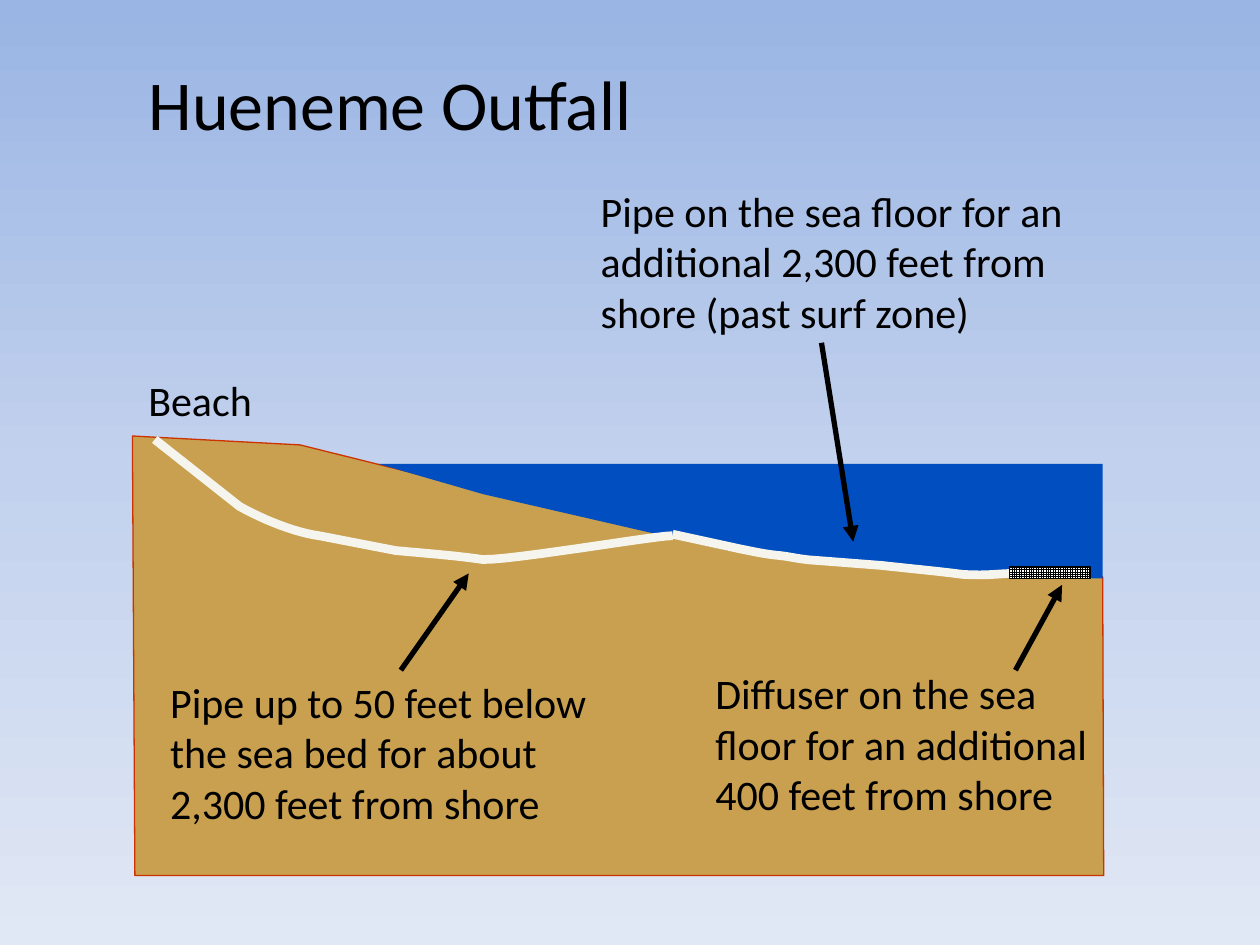
from copy import deepcopy

from lxml.etree import SubElement
from pptx import Presentation
from pptx.dml.color import RGBColor
from pptx.enum.dml import MSO_PATTERN
from pptx.enum.shapes import MSO_CONNECTOR, MSO_SHAPE
from pptx.enum.text import MSO_ANCHOR, MSO_AUTO_SIZE, PP_ALIGN
from pptx.oxml.ns import qn
from pptx.util import Cm, Pt

BLACK, SAND, SEA, PIPE, RUST = "000000", "C9A04F", "004EC0", "F5F4ED", "CC3300"
SKY = ["9AB5E4", "C2D1ED", "E1E8F5"]

GROUND = [(2.67, 8.79), (6.05, 8.97), (9.63, 9.86), (14.71, 11.07), (19.28, 11.61),
          (22.23, 11.63), (22.25, 17.65), (2.72, 17.65)]
WATER = [(7.62, 9.35), (22.23, 9.35), (22.23, 11.66), (19.38, 11.63),
         (14.68, 11.1), (9.73, 9.96)]
SEA_FLOOR_PIPE = [(13.56, 10.77), (14.94, 11.07),
                  (15.24, 11.13, 15.47, 11.18, 15.72, 11.2),
                  (15.98, 11.23, 16.13, 11.28, 16.48, 11.3), (17.78, 11.4),
                  (18.31, 11.46, 18.87, 11.51, 19.41, 11.58),
                  (19.96, 11.61, 20.12, 11.56, 20.47, 11.56)]
BURIED_PIPE = [(3.12, 8.86), (4.83, 10.21), (5.33, 10.49, 5.97, 10.74, 6.43, 10.8),
               (7.98, 11.1), (8.51, 11.15, 9.19, 11.2, 9.73, 11.28),
               (10.29, 11.3, 13.21, 10.8, 13.56, 10.8)]

ARROWS = [(8.08, 13.51, 9.45, 11.56), (16.56, 6.91, 17.2, 10.92),
          (20.47, 13.51, 21.41, 11.79)]
LABELS = [
    ("Pipe on the sea floor for an additional 2,300 feet from shore (past surf zone)",
     (11.86, 3.61, 10.36, 3.33)),
    ("Pipe up to 50 feet below the sea bed for about 2,300 feet from shore",
     (3.18, 13.51, 9.32, 3.33)),
    ("Diffuser on the sea floor for an additional 400 feet from shore",
     (14.17, 13.34, 8.46, 3.33)),
    ("Beach", (2.74, 7.42, 2.72, 1.27)),
]


def color(value):
    """Turn a hex string into a colour."""
    return RGBColor.from_string(value)


def set_line(shape, value, width):
    """Give a shape or connector a solid line."""
    shape.line.color.rgb = color(value)
    shape.line.width = Pt(width)


def set_text(frame, text, size):
    """Write one left-aligned paragraph in black Calibri."""
    frame.word_wrap = True
    para = frame.paragraphs[0]
    para.text = text
    para.alignment = PP_ALIGN.LEFT
    para.font.name = "Calibri"
    para.font.size = Pt(size)
    para.font.color.rgb = color(BLACK)


def paint_sky(page):
    """Fill the background with an even gradient from top to bottom."""
    fill = page.background.fill
    fill.gradient()
    fill.gradient_angle = 270
    stops = page._element.find(f".//{qn('a:gsLst')}")
    stops.insert(1, deepcopy(stops[0]))
    for index, (stop, value) in enumerate(zip(fill.gradient_stops, SKY)):
        stop.color.rgb = color(value)
        stop.position = index / (len(SKY) - 1)


def add_title(page, text):
    """Place and format the title placeholder."""
    title = page.shapes.title
    title.left, title.top, title.width, title.height = map(Cm, (2.74, 0.76, 22.66, 2.62))
    title.text_frame.vertical_anchor = MSO_ANCHOR.MIDDLE
    set_text(title.text_frame, text, 40)


def flatten(outline, steps=12):
    """Turn an outline of points and Bézier curves into plain points."""
    points = []
    for part in outline:
        if len(part) == 2:
            points.append(part)
            continue
        nodes = [points[-1], part[:2], part[2:4], part[4:]]
        for step in range(1, steps + 1):
            t = step / steps
            weights = ((1 - t) ** 3, 3 * t * (1 - t) ** 2, 3 * t * t * (1 - t), t ** 3)
            points.append(tuple(sum(w * node[axis] for w, node in zip(weights, nodes))
                                for axis in (0, 1)))
    return points


def add_outline(page, outline, fill=None, line=None, width=0.75):
    """Draw a closed area when filled, otherwise an open line."""
    start, *rest = [(Cm(x), Cm(y)) for x, y in flatten(outline)]
    builder = page.shapes.build_freeform(*start)
    builder.add_line_segments(rest, close=fill is not None)
    shape = builder.convert_to_shape()
    shape.shadow.inherit = False
    if fill:
        shape.fill.solid()
        shape.fill.fore_color.rgb = color(fill)
    else:
        shape.fill.background()
    if line:
        set_line(shape, line, width)
    else:
        shape.line.fill.background()


def add_arrow(page, ends):
    """Draw a black arrow that points at its second end."""
    arrow = page.shapes.add_connector(MSO_CONNECTOR.STRAIGHT, *map(Cm, ends))
    set_line(arrow, BLACK, 3)
    SubElement(arrow.line._get_or_add_ln(), qn("a:tailEnd"), type="triangle")
    SubElement(arrow._element.spPr, qn("a:effectLst"))


def add_label(page, text, place):
    """Add a wrapped text box."""
    box = page.shapes.add_textbox(*map(Cm, place))
    box.text_frame.auto_size = MSO_AUTO_SIZE.SHAPE_TO_FIT_TEXT
    set_text(box.text_frame, text, 24)


def add_diffuser(page):
    """Add the gridded diffuser at the end of the pipe."""
    diffuser = page.shapes.add_shape(MSO_SHAPE.RECTANGLE, *map(Cm, (20.35, 11.43, 1.63, 0.23)))
    diffuser.shadow.inherit = False
    diffuser.fill.patterned()
    diffuser.fill.pattern = MSO_PATTERN.SMALL_GRID
    diffuser.fill.fore_color.rgb = color(BLACK)
    diffuser.fill.back_color.rgb = color("FFFFFF")
    set_line(diffuser, BLACK, 0.75)


def main():
    """Build the slide and save it."""
    deck = Presentation()
    deck.slide_width, deck.slide_height = Cm(25.4), Cm(19.05)
    page = deck.slides.add_slide(deck.slide_layouts[5])
    paint_sky(page)
    add_title(page, "Hueneme Outfall")
    add_outline(page, GROUND, fill=SAND, line=RUST)
    add_outline(page, WATER, fill=SEA)
    for ends in ARROWS:
        add_arrow(page, ends)
    for text, place in LABELS:
        add_label(page, text, place)
    add_outline(page, SEA_FLOOR_PIPE, line=PIPE, width=5)
    add_diffuser(page)
    add_outline(page, BURIED_PIPE, line=PIPE, width=5)
    deck.save("out.pptx")


if __name__ == "__main__":
    main()
